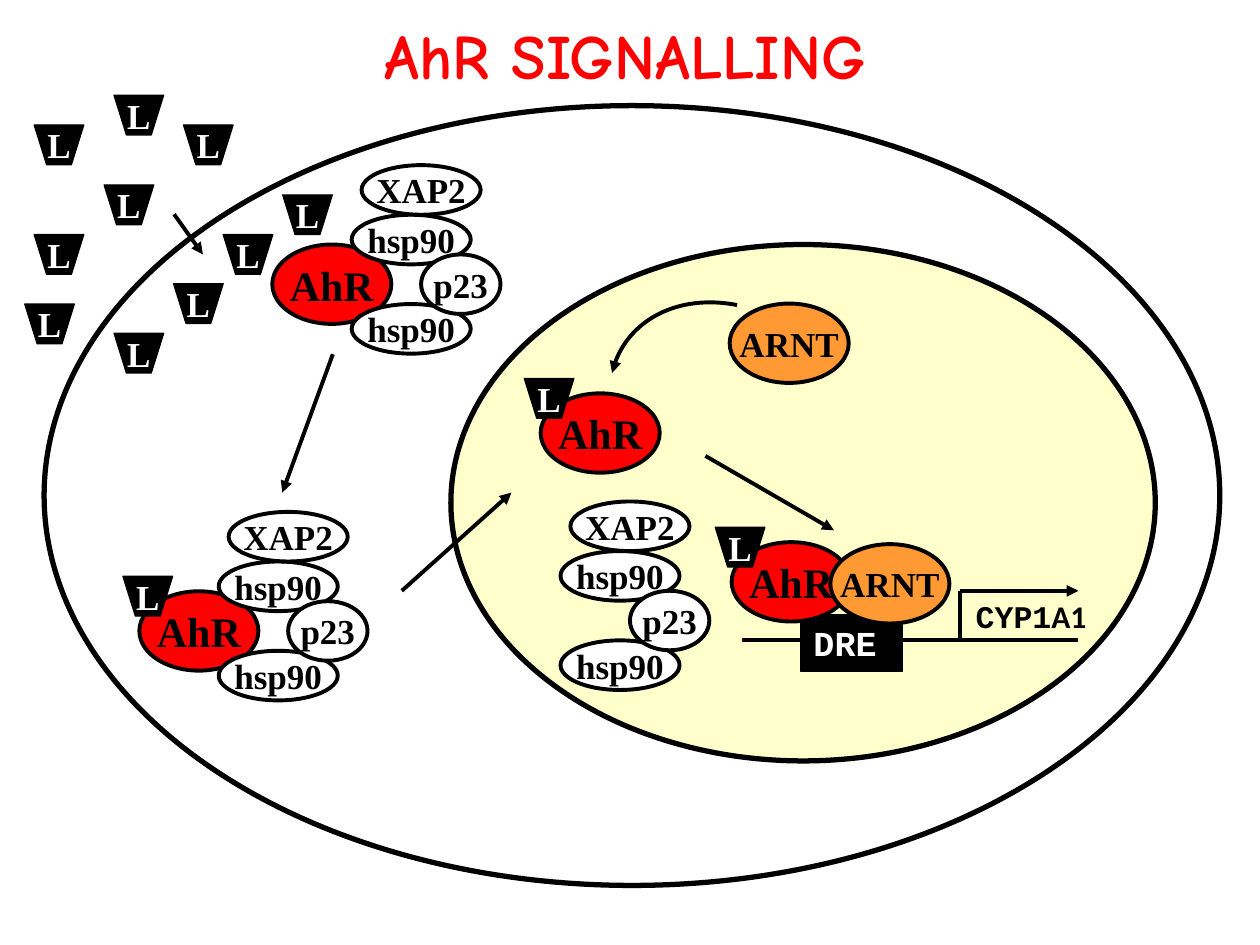
"""Build a one-slide diagram of AhR signalling from cell entry to gene activation."""
from lxml import etree
from pptx import Presentation
from pptx.dml.color import RGBColor
from pptx.enum.shapes import MSO_CONNECTOR, MSO_SHAPE
from pptx.enum.text import MSO_ANCHOR, MSO_AUTO_SIZE, PP_ALIGN
from pptx.oxml.ns import qn
from pptx.util import Cm, Pt

OVAL, RECTANGLE, STRAIGHT = MSO_SHAPE.OVAL, MSO_SHAPE.RECTANGLE, MSO_CONNECTOR.STRAIGHT
TOP, MIDDLE = MSO_ANCHOR.TOP, MSO_ANCHOR.MIDDLE
LEFT, CENTER = PP_ALIGN.LEFT, PP_ALIGN.CENTER

THEME = {
    "black": "000000", "white": "FFFFFF", "red": "FF0000",
    "orange": "FF9933", "cream": "FFFFCC",
    "serif": "Times New Roman", "mono": "Courier New",
    "sans": "Calibri", "comic": "Comic Neue",
    "title": 36, "receptor": 24, "label": 20, "gene": 18,
    "membrane": 3, "outline": 2.25, "thin": 1, "hairline": 0.75,
}

TITLE = ("AhR SIGNALLING ", (6.53, 0.2, 12.6, 1.8))
MEMBRANES = [((0.89, 2.13, 23.7, 15.72), "white"), ((9.09, 4.93, 14.2, 10.41), "cream")]
DRE = ("DRE", (16.15, 12.4, 2.03, 1.14))
GENE = ([("CYP1", "mono"), ("A1", "sans")], (19.3, 11.91, 2.97, 1.02))

PROTEINS = {
    "AhR": (2.4, 1.6, "red", "receptor"),
    "ARNT": (2.4, 1.6, "orange", "label"),
    "hsp90": (2.4, 1, "white", "label"),
    "p23": (1.6, 1.2, "white", "label"),
    "XAP2": (2.4, 1, "white", "label"),
}
CHAPERONES = [("hsp90", 1.6, 1.2), ("hsp90", 1.6, -0.6), ("p23", 3, 0.2), ("XAP2", 1.8, -1.6)]
FREE_AHR = (5.49, 4.93)
BOUND_AHR = (2.81, 11.92)
RELEASED_CHAPERONES = (9.7, 11.71)
NUCLEAR_AHR = (10.9, 7.93)
DIMER_AHR = (14.75, 10.93)
FREE_ARNT = (14.71, 6.12)
DIMER_ARNT = (16.74, 10.97)

LIGAND_SIZE = (1, 0.8)
LIGAND_ON_AHR = (-0.33, -0.3)
LIGANDS = [(0.69, 2.52), (2.3, 1.92), (0.69, 4.73), (3.7, 2.52), (2.1, 3.73),
           (0.5, 6.13), (3.5, 5.72), (2.3, 6.72), (5.7, 3.93), (4.5, 4.73)]

DNA = (14.96, 12.9, 21.74, 12.9)
PROMOTER = (19.35, 12.9, 19.35, 11.91)
ARROWS = [(3.51, 4.32, 4.09, 5.13), (6.71, 7.14, 5.69, 9.93), (8.1, 11.91, 10.31, 9.93),
          (19.35, 11.91, 21.74, 11.91), (14.22, 9.19, 16.81, 10.69)]
ARNT_CURVE = [(14.86, 6.15), (13.67, 5.92), (12.55, 6.53), (12.34, 7.52)]


def lengths(values):
    return [Cm(value) for value in values]


def color(name):
    return RGBColor.from_string(THEME[name])


def write(box, text, font="serif", size="label", ink="black",
          align=CENTER, anchor=MIDDLE, fit=MSO_AUTO_SIZE.NONE):
    frame = box.text_frame
    frame.word_wrap = False
    frame.auto_size = fit
    frame.vertical_anchor = anchor
    para = frame.paragraphs[0]
    para.alignment = align
    parts = [(text, font)] if isinstance(text, str) else text
    for words, face in parts:
        span = para.add_run()
        span.text = words
        span.font.name = THEME[face]
        span.font.size = Pt(THEME[size])
        span.font.bold = True
        span.font.color.rgb = color(ink)


def paint(shape, fill, width):
    shape.shadow.inherit = False
    if fill:
        shape.fill.solid()
        shape.fill.fore_color.rgb = color(fill)
    else:
        shape.fill.background()
    shape.line.color.rgb = color("black")
    shape.line.width = Pt(THEME[width])
    return shape


def add_preset(page, kind, place, fill, width):
    return paint(page.shapes.add_shape(kind, *lengths(place)), fill, width)


def add_protein(page, name, left, top):
    width, height, fill, size = PROTEINS[name]
    oval = add_preset(page, OVAL, (left, top, width, height), fill, "outline")
    write(oval, name, size=size)


def add_chaperones(page, origin):
    for name, right, down in CHAPERONES:
        add_protein(page, name, origin[0] + right, origin[1] + down)


def add_outline(page, points, close):
    start, *rest = [lengths(point) for point in points]
    builder = page.shapes.build_freeform(*start)
    builder.add_line_segments(rest, close=close)
    return builder.convert_to_shape()


def add_ligand(page, left, top):
    width, height = LIGAND_SIZE
    corners = [(0, 0), (0.25, 1), (0.75, 1), (1, 0)]
    points = [(left + x * width, top + y * height) for x, y in corners]
    ligand = paint(add_outline(page, points, True), "black", "hairline")
    write(ligand, "L", ink="white")


def add_bound_ahr(page, left, top):
    add_protein(page, "AhR", left, top)
    add_ligand(page, left + LIGAND_ON_AHR[0], top + LIGAND_ON_AHR[1])


def add_arrowhead(shape):
    etree.SubElement(shape.line._get_or_add_ln(), qn("a:tailEnd"), type="triangle")


def add_line(page, ends, arrow=False):
    line = page.shapes.add_connector(STRAIGHT, *lengths(ends))
    line.line.color.rgb = color("black")
    line.line.width = Pt(THEME["outline"])
    if arrow:
        add_arrowhead(line)
    etree.SubElement(line._element.spPr, qn("a:effectLst"))


def add_curve(page, points):
    curve = paint(add_outline(page, points, False), None, "outline")
    segments = list(curve._element.iter(qn("a:lnTo")))
    route = segments[0].getparent()
    bezier = etree.SubElement(route, qn("a:cubicBezTo"))
    for segment in segments:
        bezier.append(segment[0])
        route.remove(segment)
    add_arrowhead(curve)


def add_title(page):
    text, place = TITLE
    title = page.shapes.title
    title.left, title.top, title.width, title.height = lengths(place)
    write(title, text, font="comic", size="title", ink="red", anchor=TOP)


def main():
    deck = Presentation()
    deck.slide_width, deck.slide_height = Cm(25.4), Cm(19.05)
    page = deck.slides.add_slide(deck.slide_layouts[5])
    add_title(page)

    for place, fill in MEMBRANES:
        add_preset(page, OVAL, place, fill, "membrane")
    add_line(page, DNA)
    element = add_preset(page, RECTANGLE, DRE[1], "black", "thin")
    write(element, DRE[0], font="mono", ink="white", align=LEFT, anchor=TOP)

    add_protein(page, "AhR", *FREE_AHR)
    add_chaperones(page, FREE_AHR)
    for place in LIGANDS:
        add_ligand(page, *place)
    add_protein(page, "AhR", *BOUND_AHR)
    add_chaperones(page, BOUND_AHR)
    add_ligand(page, *[a + b for a, b in zip(BOUND_AHR, LIGAND_ON_AHR)])
    add_chaperones(page, RELEASED_CHAPERONES)
    add_bound_ahr(page, *NUCLEAR_AHR)
    add_protein(page, "ARNT", *FREE_ARNT)
    add_curve(page, ARNT_CURVE)

    add_line(page, PROMOTER)
    for ends in ARROWS:
        add_line(page, ends, arrow=True)
    gene = page.shapes.add_textbox(*lengths(GENE[1]))
    write(gene, GENE[0], size="gene", anchor=TOP, fit=MSO_AUTO_SIZE.SHAPE_TO_FIT_TEXT)
    add_bound_ahr(page, *DIMER_AHR)
    add_protein(page, "ARNT", *DIMER_ARNT)
    deck.save("out.pptx")


if __name__ == "__main__":
    main()
